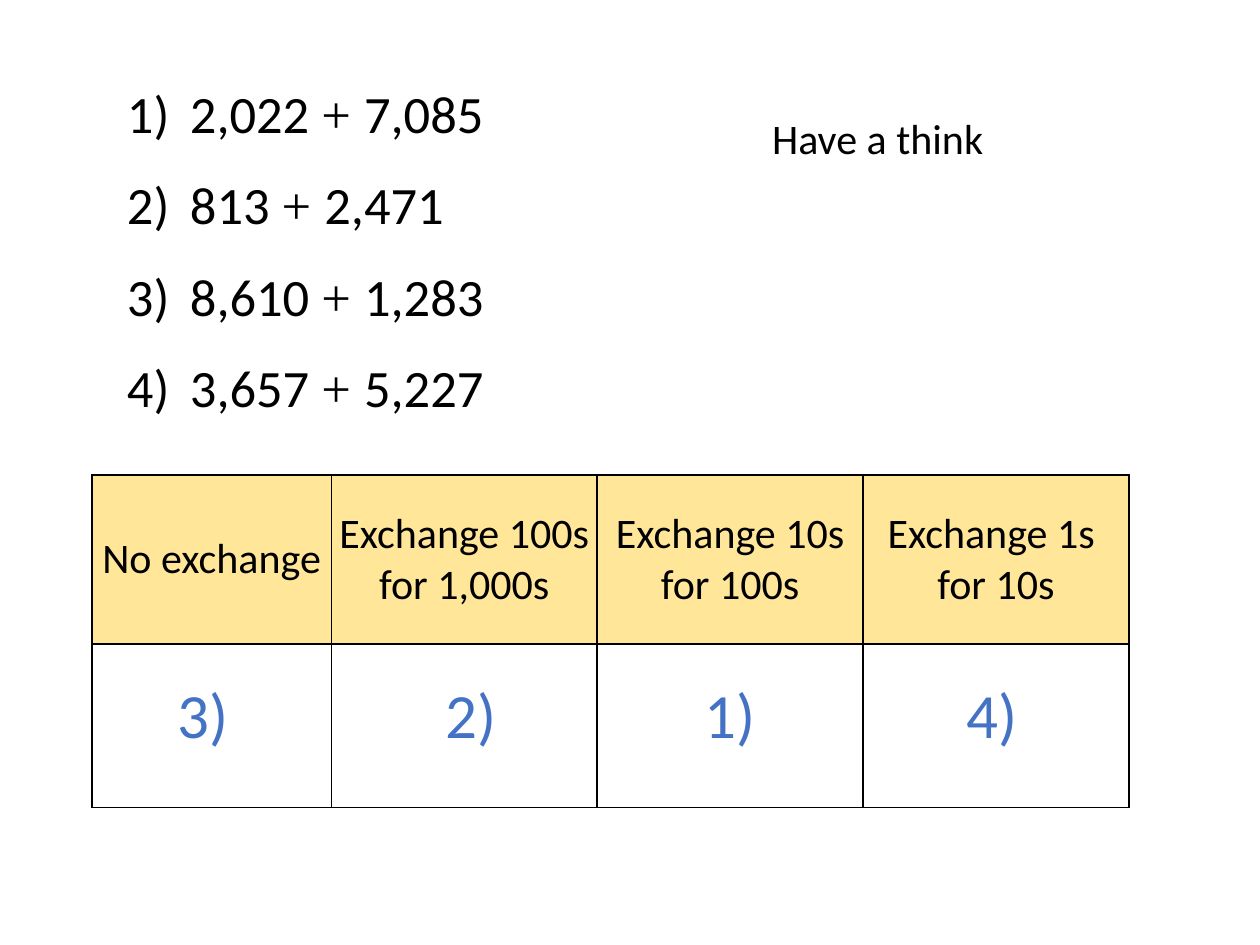
from dataclasses import dataclass
from typing import Any

from lxml.etree import SubElement
from pptx import Presentation
from pptx.dml.color import RGBColor
from pptx.enum.text import MSO_ANCHOR, PP_ALIGN
from pptx.oxml.ns import qn
from pptx.util import Inches, Pt

BLACK = RGBColor(0x00, 0x00, 0x00)
BLUE = RGBColor(0x44, 0x72, 0xC4)
CREAM = RGBColor(0xFF, 0xE6, 0x99)
WIDE, HIGH = 10, 7.5


@dataclass
class Sheet:
    """Draws sums, labels and a table on one slide, placed in inches of its size."""

    slide: Any
    font: str = "Calibri"
    sign: str = "Times New Roman"

    def run(self, para, text, size, color=BLACK, font=None):
        run = para.add_run()
        run.text = text
        run.font.size = Pt(size)
        run.font.name = font or self.font
        run.font.color.rgb = color

    def box(self, left, top, width, height, wrap=True):
        area = [Inches(n) for n in (left, top, width, height)]
        frame = self.slide.shapes.add_textbox(*area).text_frame
        frame.word_wrap = wrap
        return frame.paragraphs[0]

    def label(self, text, area, size, color=BLACK, wrap=True):
        self.run(self.box(*area, wrap), text, size, color)

    def sum(self, mark, first, last, area):
        para = self.box(*area)
        tabs = SubElement(para._p.get_or_add_pPr(), qn("a:tabLst"))
        SubElement(tabs, qn("a:tab"), pos=str(Inches(0.5)), algn="l")
        self.run(para, f"{mark})\t{first} ", 30)
        self.run(para, "+ ", 30, font=self.sign)
        self.run(para, last, 30)

    def edge(self, cell):
        props = cell._tc.get_or_add_tcPr()
        for spot, side in enumerate(("a:lnL", "a:lnR", "a:lnT", "a:lnB")):
            line = props.makeelement(qn(side), {"w": str(Pt(1))})
            fill = SubElement(line, qn("a:solidFill"))
            SubElement(fill, qn("a:srgbClr"), val=str(BLACK))
            props.insert(spot, line)

    def head(self, cell, lines):
        cell.fill.solid()
        cell.fill.fore_color.rgb = CREAM
        cell.vertical_anchor = MSO_ANCHOR.MIDDLE
        cell.margin_left = cell.margin_right = 0
        cell.margin_top = cell.margin_bottom = 0
        frame = cell.text_frame
        for spot, line in enumerate(lines):
            para = frame.add_paragraph() if spot else frame.paragraphs[0]
            para.alignment = PP_ALIGN.CENTER
            self.run(para, line, 24)

    def table(self, heads, left, top, cols, rows):
        area = [Inches(n) for n in (left, top, sum(cols), sum(rows))]
        table = self.slide.shapes.add_table(len(rows), len(cols), *area).table
        table.first_row = table.horz_banding = False
        for col, width in zip(table.columns, cols):
            col.width = Inches(width)
        for row, height in zip(table.rows, rows):
            row.height = Inches(height)
        for spot, lines in enumerate(heads):
            self.head(table.cell(0, spot), lines)
            table.cell(1, spot).fill.background()
        for cell in table.iter_cells():
            self.edge(cell)


def main():
    deck = Presentation()
    deck.slide_width, deck.slide_height = Inches(WIDE), Inches(HIGH)
    sheet = Sheet(deck.slides.add_slide(deck.slide_layouts[6]))

    heads = [
        ["No exchange"],
        ["Exchange 100s for 1,000s"],
        ["Exchange 10s for 100s"],
        ["Exchange 1s ", "for 10s"],
    ]
    sheet.table(heads, 0.73, 3.77, [1.9] + [2.11] * 3, [1.34, 1.3])

    sums = [("2,022", "7,085"), ("813", "2,471"), ("8,610", "1,283"), ("3,657", "5,227")]
    for spot, (first, last) in enumerate(sums):
        sheet.sum(spot + 1, first, last, (0.91, 0.59 + 0.727 * spot, 4.44, 0.61))

    for mark, left in (("3)", 1.31), ("2)", 3.44), ("1)", 5.49), ("4)", 7.57)):
        sheet.label(mark, (left, 5.31, 0.61, 0.71), 36, BLUE, wrap=False)

    sheet.label("Have a think", (6.03, 0.84, 2, 0.5), 24)
    deck.save("out.pptx")


if __name__ == "__main__":
    main()
